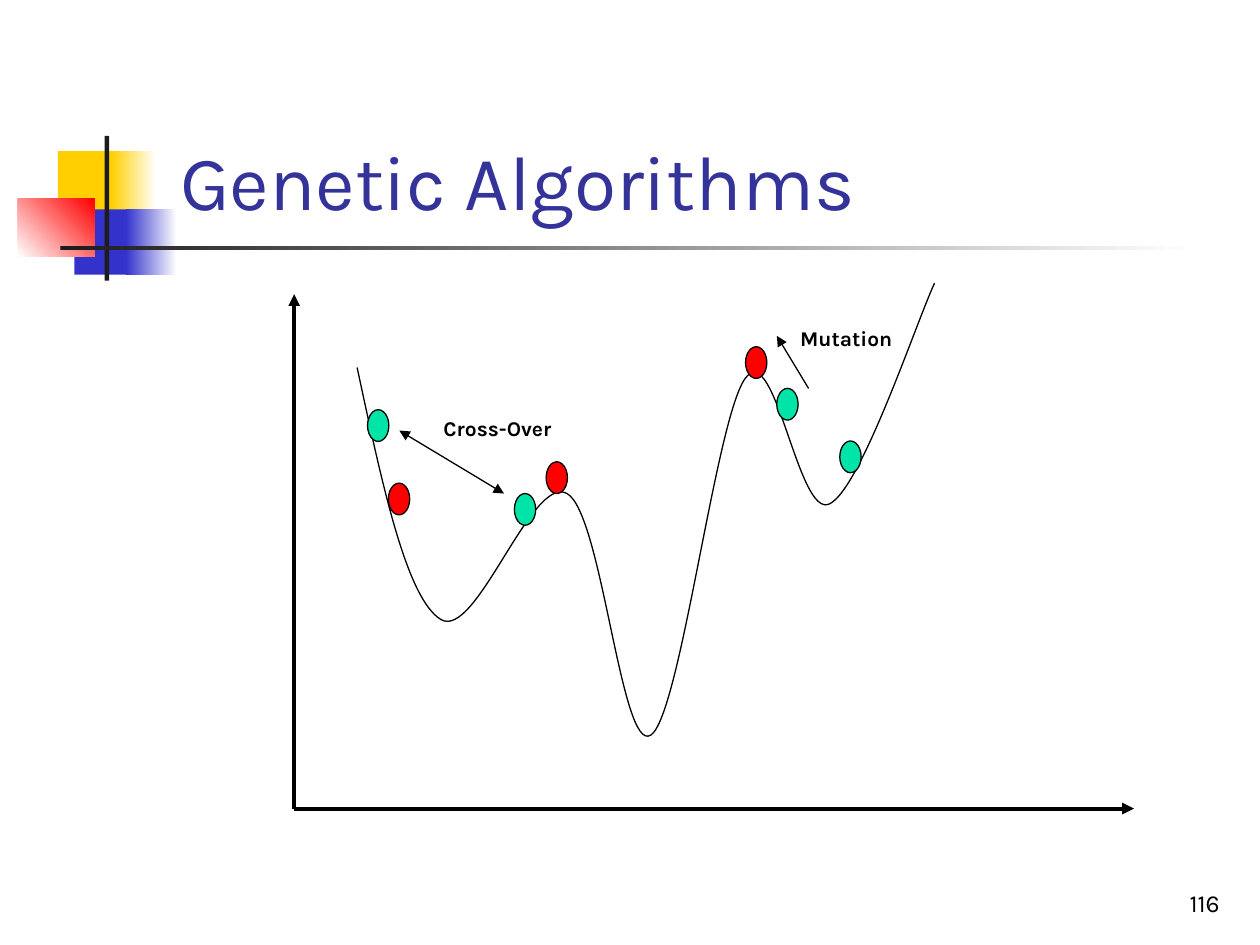
import lxml.etree
import pptx
import pptx.dml.color
import pptx.enum.shapes
import pptx.enum.text
import pptx.oxml.ns
import pptx.util

Cm = pptx.util.Cm
Pt = pptx.util.Pt
RGBColor = pptx.dml.color.RGBColor
Shape = pptx.enum.shapes.MSO_SHAPE
Anchor = pptx.enum.text.MSO_ANCHOR
Align = pptx.enum.text.PP_ALIGN
qn = pptx.oxml.ns.qn

BLACK = RGBColor(0x00, 0x00, 0x00)
WHITE = RGBColor(0xFF, 0xFF, 0xFF)
CHARCOAL = RGBColor(0x1C, 0x1C, 0x1C)
YELLOW = RGBColor(0xFF, 0xCF, 0x01)
BLUE = RGBColor(0x33, 0x33, 0xCC)
RED = RGBColor(0xFF, 0x00, 0x00)
GREEN = RGBColor(0x00, 0xE4, 0xA8)
INDIGO = RGBColor(0x33, 0x33, 0x99)

DECORATIONS = [
    ((1.17, 3.05, 1.22, 1.32), [YELLOW], 0),
    ((2.24, 3.05, 0.91, 1.32), [YELLOW, WHITE], 0),
    ((1.5, 4.22, 1.17, 1.32), [BLUE], 0),
    ((2.54, 4.22, 1.02, 1.32), [BLUE, WHITE], 0),
    ((0.36, 4.01, 1.55, 1.17), [WHITE, RED], 45),
    ((2.11, 2.74, 0.09, 2.92), [CHARCOAL], 0),
    ((1.22, 4.95, 22.86, 0.09), [CHARCOAL, WHITE], 0),
]
ORIGIN = (5.93, 16.3)
FITNESS_CURVE = [
    (7.2, 7.41),
    (7.7, 9.74), (8.19, 12.07), (8.89, 12.49),
    (9.6, 12.91), (10.72, 9.55), (11.43, 9.95),
    (12.14, 10.34), (12.52, 15.21), (13.12, 14.82),
    (13.72, 14.43), (14.43, 8.41), (15.03, 7.62),
    (15.63, 6.83), (16.09, 10.46), (16.72, 10.16),
    (17.36, 9.86), (18.49, 6.45), (18.84, 5.71),
]
POPULATION = {
    GREEN: [(7.41, 8.26), (10.37, 9.95), (15.66, 7.83), (16.93, 8.89)],
    RED: [(7.83, 9.74), (11.01, 9.31), (15.03, 6.99)],
}


class SlideBuilder:
    font_name = "Karla"
    thin = 0.75
    thick = 2.25
    dot_size = (0.43, 0.64)

    def __init__(self, slide):
        self.slide = slide

    def outline(self, line, width):
        line.color.rgb = BLACK
        line.width = Pt(width)

    def block(self, box, colors, angle):
        shape = self.slide.shapes.add_shape(Shape.RECTANGLE, *map(Cm, box))
        shape.shadow.inherit = False
        shape.line.fill.background()
        if len(colors) == 1:
            shape.fill.solid()
            shape.fill.fore_color.rgb = colors[0]
        else:
            shape.fill.gradient()
            shape.fill.gradient_angle = angle
            for stop, color in zip(shape.fill.gradient_stops, colors):
                stop.color.rgb = color

    def dot(self, corner, color):
        shape = self.slide.shapes.add_shape(
            Shape.OVAL, *map(Cm, corner + self.dot_size))
        shape.shadow.inherit = False
        shape.fill.solid()
        shape.fill.fore_color.rgb = color
        self.outline(shape.line, self.thin)

    def arrow(self, start, end, width, ends=("tailEnd",)):
        connector = self.slide.shapes.add_connector(
            pptx.enum.shapes.MSO_CONNECTOR.STRAIGHT, *map(Cm, start + end))
        self.outline(connector.line, width)
        properties = connector.element.spPr
        for name in ends:
            lxml.etree.SubElement(
                properties.get_or_add_ln(), qn("a:" + name), type="triangle")
        lxml.etree.SubElement(properties, qn("a:effectLst"))

    def curve(self, points):
        start, *others = [(Cm(x), Cm(y)) for x, y in points]
        builder = self.slide.shapes.build_freeform(*start)
        builder.add_line_segments(others, close=False)
        shape = builder.convert_to_shape()
        shape.shadow.inherit = False
        shape.fill.background()
        self.outline(shape.line, self.thin)
        outline = next(shape.element.iter(qn("a:path")))
        segments = outline.findall(qn("a:lnTo"))
        for index in range(0, len(segments), 3):
            bezier = lxml.etree.SubElement(outline, qn("a:cubicBezTo"))
            for segment in segments[index:index + 3]:
                bezier.append(segment[0])
                outline.remove(segment)

    def text(self, box, words, size, color=BLACK, bold=False,
             anchor=Anchor.TOP, align=Align.LEFT):
        frame = self.slide.shapes.add_textbox(*map(Cm, box)).text_frame
        paragraph = frame.paragraphs[0]
        run = paragraph.add_run()
        run.text = words
        run.font.color.rgb = color
        formats = {
            frame: {"word_wrap": True, "vertical_anchor": anchor},
            paragraph: {"alignment": align},
            run.font: {"name": self.font_name, "size": Pt(size), "bold": bold},
        }
        for target, values in formats.items():
            for name, value in values.items():
                setattr(target, name, value)


def main():
    presentation = pptx.Presentation()
    presentation.slide_width = Cm(25.4)
    presentation.slide_height = Cm(19.05)
    builder = SlideBuilder(
        presentation.slides.add_slide(presentation.slide_layouts[6]))

    for box, colors, angle in DECORATIONS:
        builder.block(box, colors, angle)
    builder.text((19.56, 17.35, 5.28, 1.27), "116", 14,
                 anchor=Anchor.BOTTOM, align=Align.RIGHT)
    builder.text((3.38, 2.39, 25.02 - 3.38, 2.29), "Genetic Algorithms", 44,
                 color=INDIGO, anchor=Anchor.BOTTOM)

    for axis_end in [(5.93, 5.93), (22.86, 16.3)]:
        builder.arrow(ORIGIN, axis_end, builder.thick)
    builder.curve(FITNESS_CURVE)
    for color, corners in POPULATION.items():
        for corner in corners:
            builder.dot(corner, color)

    builder.arrow((8.05, 8.68), (10.16, 9.95), builder.thin,
                  ends=("headEnd", "tailEnd"))
    builder.arrow((16.3, 7.83), (15.66, 6.77), builder.thin)
    builder.text((15.88, 6.43, 2.74, 0.76), "Mutation", 12, bold=True)
    builder.text((8.69, 8.26, 3.18, 0.76), "Cross-Over", 12, bold=True)

    presentation.save("out.pptx")


if __name__ == "__main__":
    main()
